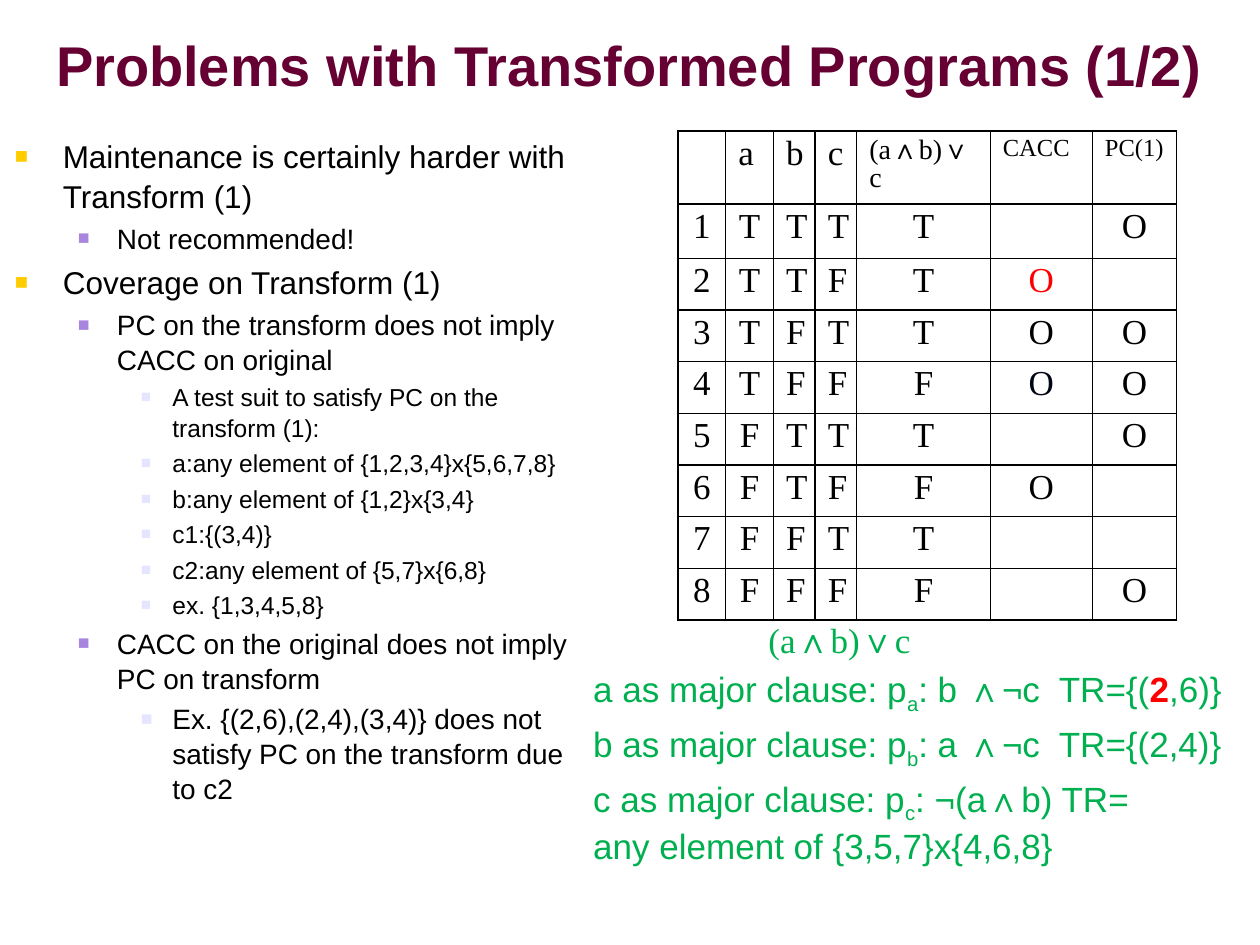
from dataclasses import dataclass
from pptx import Presentation
from pptx.dml.color import RGBColor
from pptx.enum.text import MSO_ANCHOR, PP_ALIGN
from pptx.oxml.ns import qn
from pptx.util import Inches, Pt
from lxml.etree import SubElement

HUES = {
    "plum": "660033", "black": "000000", "gold": "FFCC00", "violet": "A886E0",
    "lilac": "E5E5FF", "red": "FF0000", "navy": "000514", "green": "00B050",
}
SANS, SERIF = "Arial", "Times New Roman"
WIDE, HIGH = 10, 7.5


@dataclass
class Run:
    text: str
    size: float
    hue: str = "black"
    face: str = SANS
    bold: bool = False
    sub: bool = False


@dataclass
class Level:
    left: float
    hang: float
    hue: str


@dataclass
class Point:
    level: int
    size: int
    text: str


LEVELS = [Level(0.38, 0.38, "gold"), Level(0.81, 0.31, "violet"), Level(1.25, 0.25, "lilac")]
POINTS = [
    Point(0, 18, "Maintenance is certainly harder with Transform (1)"),
    Point(1, 16, "Not recommended!"),
    Point(0, 18, "Coverage on Transform (1)"),
    Point(1, 16, "PC on the transform does not imply CACC on original"),
    Point(2, 14, "A test suit to satisfy PC on the transform (1):"),
    Point(2, 14, "a:any element of {1,2,3,4}x{5,6,7,8}"),
    Point(2, 14, "b:any element of {1,2}x{3,4}"),
    Point(2, 14, "c1:{(3,4)}"),
    Point(2, 14, "c2:any element of {5,7}x{6,8}"),
    Point(2, 14, "ex. {1,3,4,5,8}"),
    Point(1, 16, "CACC on the original does not imply PC on transform"),
    Point(2, 16, "Ex. {(2,6),(2,4),(3,4)} does not satisfy PC on the transform due to c2"),
]
HEADS = [("", 20), ("a", 20), ("b", 20), ("c", 20), ("(a∧b)∨c", 16), ("CACC", 14), ("PC(1)", 14)]
TRUTHS = ["TTTT O", "TTFTO ", "TFTTOO", "TFFFOO", "FTTT O", "FTFFO ", "FFTT  ", "FFFF O"]
MARKS = {(2, 5): "red", (4, 5): "navy"}
COLS = [3.8, 3.8, 3.3, 3.3, 10.6, 8.1, 6.7]
ROWS = [7.2, 5.73] + [5.47] * 7


def across(share: float) -> int:
    return Inches(WIDE * share / 100)


def down(share: float) -> int:
    return Inches(HIGH * share / 100)


def write(para, run: Run) -> None:
    item = para.add_run()
    item.text = run.text
    font = item.font
    font.name, font.size, font.bold = run.face, Pt(run.size), run.bold
    font.color.rgb = RGBColor.from_string(HUES[run.hue])
    if run.sub:
        item._r.get_or_add_rPr().set("baseline", "-25000")


def add_box(slide, left: float, top: float, width: float, height: float):
    box = slide.shapes.add_textbox(across(left), down(top), across(width), down(height))
    box.text_frame.word_wrap = True
    return box.text_frame


def next_para(frame, index: int, size: float):
    if index == 0:
        return frame.paragraphs[0]
    para = frame.add_paragraph()
    para.space_before = Pt(size * 0.2)
    return para


def indent(para, left: float, hang: float = 0):
    props = para._p.get_or_add_pPr()
    props.set("marL", str(Inches(left)))
    props.set("indent", str(-Inches(hang)))
    return props


def bullet(para, level: Level) -> None:
    props = indent(para, level.left, level.hang)
    tint = SubElement(props, qn("a:buClr"))
    SubElement(tint, qn("a:srgbClr"), val=HUES[level.hue])
    SubElement(props, qn("a:buSzPct"), val="70000")
    SubElement(props, qn("a:buFont"), typeface=SANS)
    SubElement(props, qn("a:buChar"), char="■")


def draw_title(slide) -> None:
    frame = add_box(slide, 1.1, 1.07, 97.7, 11.47)
    frame.vertical_anchor = MSO_ANCHOR.MIDDLE
    para = frame.paragraphs[0]
    para.alignment = PP_ALIGN.CENTER
    write(para, Run("Problems with Transformed Programs (1/2)", 32, "plum", bold=True))


def draw_points(slide) -> None:
    frame = add_box(slide, 0.2, 13.73, 45.9, 80.27)
    for index, point in enumerate(POINTS):
        para = next_para(frame, index, point.size)
        para.line_spacing = 1.04
        bullet(para, LEVELS[point.level])
        write(para, Run(point.text, point.size))


def edge(cell) -> None:
    props = cell._tc.get_or_add_tcPr()
    for index, side in enumerate(("lnL", "lnR", "lnT", "lnB")):
        line = props.makeelement(qn(f"a:{side}"), {"w": str(Pt(1))})
        fill = SubElement(line, qn("a:solidFill"))
        SubElement(fill, qn("a:srgbClr"), val=HUES["black"])
        props.insert(index, line)


def fill_cell(cell, run: Run, mid: bool) -> None:
    cell.fill.background()
    edge(cell)
    para = cell.text_frame.paragraphs[0]
    para.line_spacing = 0.9
    if mid:
        para.alignment = PP_ALIGN.CENTER
    if run.text:
        write(para, run)


def draw_table(slide) -> None:
    frame = slide.shapes.add_table(len(ROWS), len(COLS), across(53.8), down(13.87),
                                   across(sum(COLS)), down(sum(ROWS)))
    table = frame.table
    table.first_row = table.horz_banding = False
    for col, share in zip(table.columns, COLS):
        col.width = across(share)
    for row, share in zip(table.rows, ROWS):
        row.height = down(share)
    for col, (text, size) in enumerate(HEADS):
        fill_cell(table.cell(0, col), Run(text, size, face=SERIF), False)
    for row, truth in enumerate(TRUTHS, 1):
        for col, sign in enumerate(f"{row}{truth}"):
            hue = MARKS.get((row, col), "black")
            fill_cell(table.cell(row, col), Run(sign.strip(), 20, hue, SERIF), True)


def clause(name: str, *rest: Run) -> list[Run]:
    return [Run(f"{name} as major clause: p", 20, "green"),
            Run(name, 20, "green", sub=True), *rest]


def draw_rules(slide) -> None:
    frame = add_box(slide, 41.1, 64.8, 58.4, 31.87)
    lines = [
        [Run("(a∧b)∨c", 20, "green", SERIF)],
        clause("a", Run(": b ∧¬c  TR={(", 20, "green"), Run("2", 20, "red", bold=True),
               Run(",6)}", 20, "green")),
        clause("b", Run(": a ∧¬c  TR={(2,4)}", 20, "green")),
        clause("c", Run(": ¬(a∧b) TR=", 20, "green")),
    ]
    for index, runs in enumerate(lines):
        para = next_para(frame, index, 20)
        indent(para, 0.5 if index else 1.89)
        for run in runs:
            write(para, run)
    para.add_line_break()
    write(para, Run("any element of {3,5,7}x{4,6,8}", 20, "green"))


def main() -> None:
    deck = Presentation()
    deck.slide_width, deck.slide_height = Inches(WIDE), Inches(HIGH)
    slide = deck.slides.add_slide(deck.slide_layouts[6])
    for draw in (draw_title, draw_points, draw_table, draw_rules):
        draw(slide)
    deck.save("out.pptx")


if __name__ == "__main__":
    main()
